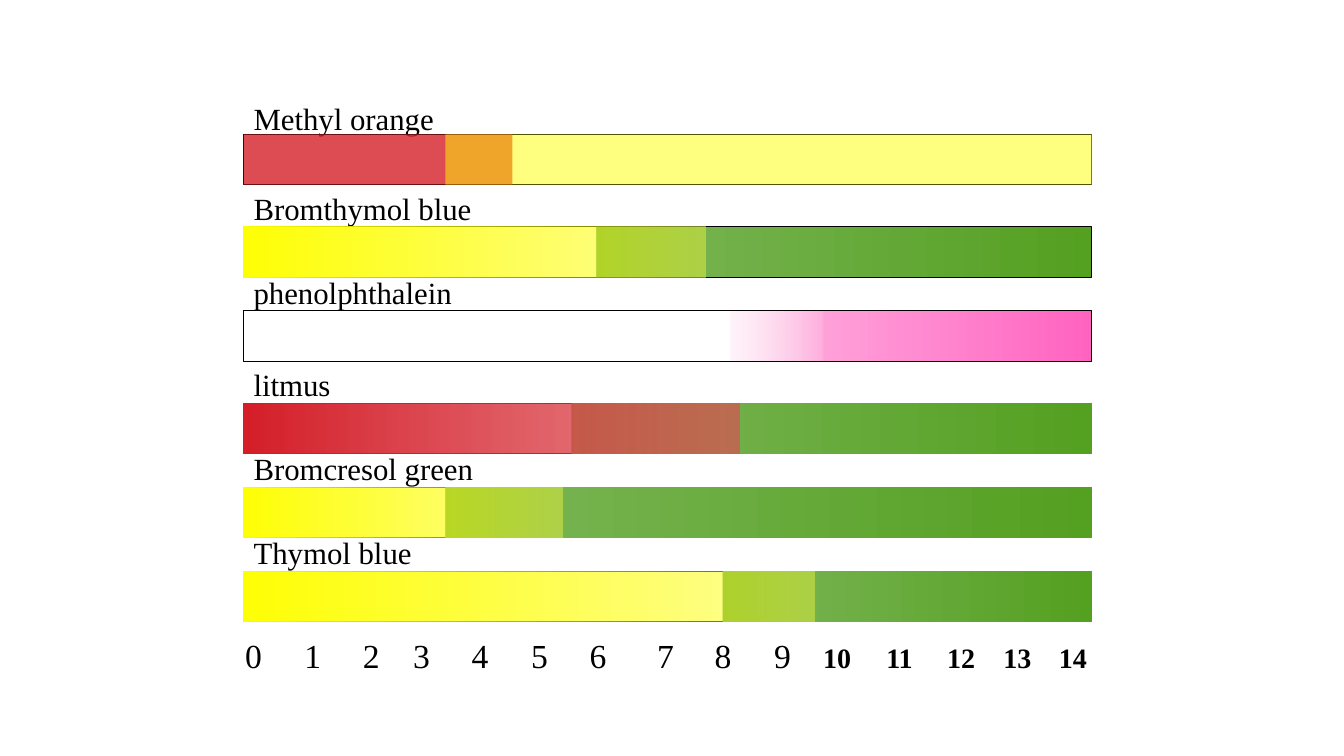
from lxml import etree
from pptx import Presentation, util as u
from pptx.dml.color import RGBColor
from pptx.enum import shapes, text
from pptx.oxml import ns

UNIT = u.Inches(1) / 12            # grid step: a twelfth of an inch
LEFT, RIGHT, BAR_HEIGHT = 29, 130, 6
FONT = "Times New Roman"

BLACK = RGBColor(0x00, 0x00, 0x00)
RED = RGBColor(0xD5, 0x1F, 0x29)
ROSE = RGBColor(0xDE, 0x4E, 0x56)
YELLOW = RGBColor(0xFF, 0xFF, 0x00)
LEMON = RGBColor(0xFF, 0xFF, 0x05)
LEAF = RGBColor(0x7C, 0xB6, 0x58)
GREEN = RGBColor(0x54, 0xA0, 0x21)
LIME = RGBColor(0x90, 0xC2, 0x26)
PALE_LIME = RGBColor(0xB4, 0xD3, 0x8C)
BLUSH = RGBColor(0xFF, 0xE0, 0xF2)
PALE_PINK = RGBColor(0xFF, 0xAE, 0xDE)
PINK = RGBColor(0xFF, 0xA0, 0xD9)
HOT_PINK = RGBColor(0xFF, 0x63, 0xC0)

# Each ramp is a list of (colour, opacity in percent), from left to right
SOLID_RED = [(RED, 80)]
SOLID_YELLOW = [(YELLOW, 50)]
YELLOW_FADE = [(LEMON, 100), (YELLOW, 40)]
GREEN_RAMP = [(LEAF, 100), (GREEN, 100)]
LIME_VEIL = [(LIME, 32), (PALE_LIME, 28)]
RED_FADE = [(RED, 100), (ROSE, 68)]
BLUSH_RAMP = [(BLUSH, 37), (PALE_PINK, 100)]
PINK_RAMP = [(PINK, 100), (HOT_PINK, 100)]

# Name, label width and row, bar row, bands under and over the frame
INDICATORS = [
    ("Methyl orange", 23.9, 11.25, 16, [],
     [(LEFT, 61, SOLID_RED), (53, RIGHT, SOLID_YELLOW)]),
    ("Bromthymol blue", 28.4, 22, 27, [(71, RIGHT, GREEN_RAMP)],
     [(LEFT, 84, YELLOW_FADE), (71, 84, LIME_VEIL)]),
    ("phenolphthalein", 26, 32, 37,
     [(87, 98, BLUSH_RAMP), (98, RIGHT, PINK_RAMP)], []),
    ("litmus", 11.6, 43, 48, [],
     [(68, RIGHT, GREEN_RAMP), (LEFT, 88, RED_FADE)]),
    ("Bromcresol green", 28.5, 53, 58, [],
     [(53, RIGHT, GREEN_RAMP), (LEFT, 67, YELLOW_FADE), (53, 67, LIME_VEIL)]),
    ("Thymol blue", 21.5, 63, 68, [],
     [(86, RIGHT, GREEN_RAMP), (LEFT, 97, YELLOW_FADE), (86, 97, LIME_VEIL)]),
]

# Centres of the pH values 1 to 14, in inches from the start of the text
PH_CENTRES = [0.67, 1.25, 1.75, 2.33, 2.92, 3.5, 4.17, 4.74, 5.33,
              5.87, 6.49, 7.1, 7.66, 8.21]


def grid(*cells):
    return [round(cell * UNIT) for cell in cells]


def add_rect(slide, start, end, row):
    s = slide.shapes.add_shape(shapes.MSO_SHAPE.RECTANGLE,
                               *grid(start, row, end - start, BAR_HEIGHT))
    s.shadow.inherit = False
    return s


def add_frame(slide, row):
    s = add_rect(slide, LEFT, RIGHT - 0.1, row)
    s.fill.background()
    s.line.color.rgb = BLACK
    s.line.width = u.Pt(0.75)


def add_band(slide, row, start, end, ramp):
    s = add_rect(slide, start, end, row)
    s.line.fill.background()
    if len(ramp) == 1:
        s.fill.solid()
        s.fill.fore_color.rgb = ramp[0][0]
    else:
        s.fill.gradient()
        s.fill.gradient_angle = 0
        for stop, (colour, _) in zip(s.fill.gradient_stops, ramp):
            stop.color.rgb = colour
    # Opacity of each colour
    colours = s._element.spPr.iter(ns.qn("a:srgbClr"))
    for element, (_, opacity) in zip(list(colours), ramp):
        if opacity < 100:
            etree.SubElement(element, ns.qn("a:alpha"), val=str(opacity * 1000))


def add_box(slide, left, top, width, height, wrap=False):
    tf = slide.shapes.add_textbox(*grid(left, top, width, height)).text_frame
    tf.word_wrap = wrap
    tf.auto_size = text.MSO_AUTO_SIZE.SHAPE_TO_FIT_TEXT
    return tf


def add_run(p, words, size=22, bold=False):
    r = p.add_run()
    r.text = words
    r.font.name, r.font.size, r.font.bold = FONT, u.Pt(size), bold
    r.font.color.rgb = BLACK


def add_ph_scale(slide):
    tf = add_box(slide, 28, 75, 103, 6, wrap=True)
    tf.margin_right = 0
    p = tf.paragraphs[0]
    tabs = etree.SubElement(p._p.get_or_add_pPr(), ns.qn("a:tabLst"))
    for centre in PH_CENTRES:
        etree.SubElement(tabs, ns.qn("a:tab"), pos=str(u.Inches(centre)), algn="ctr")
    add_run(p, "\t".join(str(n) for n in range(10)), size=24)
    add_run(p, "".join(f"\t{n}" for n in range(10, 15)), size=20, bold=True)


def main():
    prs = Presentation()
    prs.slide_width, prs.slide_height = u.Inches(13.33), u.Inches(7.5)
    slide = prs.slides.add_slide(prs.slide_layouts[6])

    # Indicator bars with their names
    for name, label_width, label_row, row, under, over in INDICATORS:
        for band in under:
            add_band(slide, row, *band)
        add_frame(slide, row)
        tf = add_box(slide, LEFT, label_row, label_width, 5.6)
        add_run(tf.paragraphs[0], name)
        for band in over:
            add_band(slide, row, *band)

    # pH values below the bars
    add_ph_scale(slide)
    prs.save("out.pptx")


if __name__ == "__main__":
    main()
